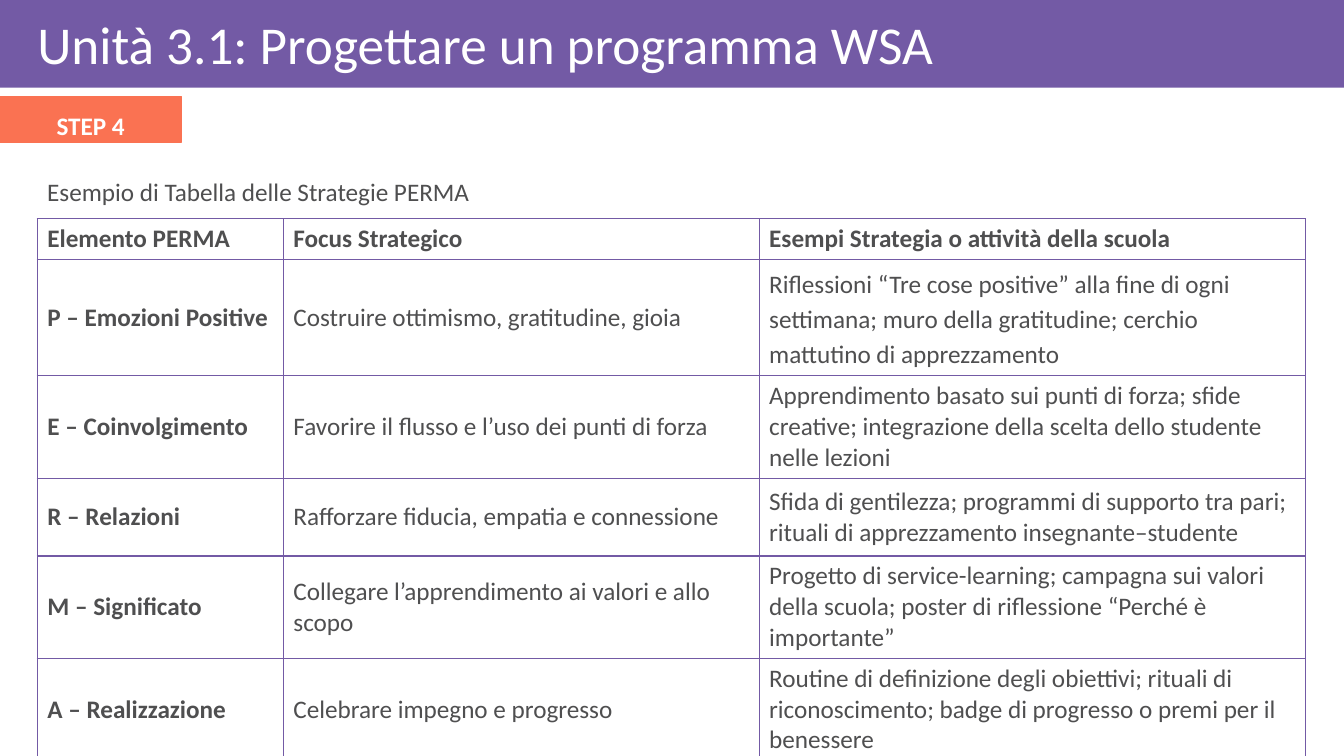
from lxml import etree
from pptx import Presentation
from pptx import util as u
from pptx.dml import color
from pptx.enum import shapes, text
from pptx.oxml import ns

COLORS = {"purple": "735AA5", "orange": "FA7252", "grey": "4F4F50", "white": "FFFFFF"}
ROWS = [
    ("Elemento PERMA", "Focus Strategico", "Esempi Strategia o attività della scuola"),
    ("P – Emozioni Positive", "Costruire ottimismo, gratitudine, gioia",
     "Riflessioni “Tre cose positive” alla fine di ogni settimana; muro della gratitudine; "
     "cerchio mattutino di apprezzamento"),
    ("E – Coinvolgimento", "Favorire il flusso e l’uso dei punti di forza",
     "Apprendimento basato sui punti di forza; sfide creative; integrazione della scelta "
     "dello studente nelle lezioni"),
    ("R – Relazioni", "Rafforzare fiducia, empatia e connessione",
     "Sfida di gentilezza; programmi di supporto tra pari; rituali di apprezzamento "
     "insegnante–studente"),
    ("M – Significato", "Collegare l’apprendimento ai valori e allo scopo",
     "Progetto di service-learning; campagna sui valori della scuola; poster di riflessione "
     "“Perché è importante”"),
    ("A – Realizzazione", "Celebrare impegno e progresso",
     "Routine di definizione degli obiettivi; rituali di riconoscimento; badge di progresso "
     "o premi per il benessere"),
]
COLUMN_WIDTHS = [6.2, 11.99, 13.77]
ROW_HEIGHTS = [0.81, 1.96, 1.96, 1.96, 1.96, 1.4]


def write(frame, words, color_name, size=18, bold=False):
    """Fill a text frame with one formatted paragraph and return the paragraph."""
    frame.text = words
    paragraph = frame.paragraphs[0]
    font = paragraph.runs[0].font
    font.name, font.size, font.bold = "Calibri", u.Pt(size), bold
    font.color.rgb = color.RGBColor.from_string(COLORS[color_name])
    return paragraph


def add_block(top, width, height, color_name):
    """Add a filled rectangle that starts at the left edge of the slide."""
    block = slide.shapes.add_shape(
        shapes.MSO_SHAPE.RECTANGLE, 0, u.Cm(top), u.Cm(width), u.Cm(height))
    block.shadow.inherit = False
    block.fill.solid()
    block.fill.fore_color.rgb = color.RGBColor.from_string(COLORS[color_name])
    block.line.color.rgb = color.RGBColor.from_string(COLORS[color_name])
    block.line.width = u.Pt(0.75)
    return block


presentation = Presentation()
presentation.slide_width, presentation.slide_height = u.Cm(33.87), u.Cm(19.05)
slide = presentation.slides.add_slide(presentation.slide_layouts[5])

# Title on its band
band = add_block(0, 33.87, 2.21, "purple")
band.line.fill.background()
slide.shapes._spTree.insert(2, band._element)

title = slide.shapes.title
title.left, title.top, title.width, title.height = u.Cm(0.69), u.Cm(0.2), u.Cm(33.17), u.Cm(1.98)
frame = title.text_frame
frame.auto_size = text.MSO_AUTO_SIZE.NONE
frame.vertical_anchor = text.MSO_ANCHOR.MIDDLE
frame.margin_left = u.Cm(0.25)
frame.margin_right = frame.margin_top = frame.margin_bottom = u.Cm(0.15)
paragraph = write(frame, "Unità 3.1: Progettare un programma WSA", "white", 38)
paragraph.alignment = text.PP_ALIGN.LEFT
paragraph.line_spacing = 0.9

# Strategy table
table = slide.shapes.add_table(
    len(ROWS), len(COLUMN_WIDTHS), u.Cm(0.94), u.Cm(5.51),
    u.Cm(sum(COLUMN_WIDTHS)), u.Cm(sum(ROW_HEIGHTS))).table
table.first_row = table.horz_banding = False
for column, width in zip(table.columns, COLUMN_WIDTHS):
    column.width = u.Cm(width)
for row, height in zip(table.rows, ROW_HEIGHTS):
    row.height = u.Cm(height)

for row_index, row_words in enumerate(ROWS):
    for column_index, words in enumerate(row_words):
        cell = table.cell(row_index, column_index)
        cell.vertical_anchor = text.MSO_ANCHOR.MIDDLE
        cell.fill.background()
        paragraph = write(cell.text_frame, words, "grey",
                          bold=row_index == 0 or column_index == 0)
        if (row_index, column_index) == (1, 2):
            paragraph.line_spacing = 1.15
            paragraph.space_before = paragraph.space_after = u.Pt(12)
        properties = cell._tc.get_or_add_tcPr()
        for position, side in enumerate(("lnL", "lnR", "lnT", "lnB")):
            border = etree.Element(ns.qn(f"a:{side}"), w=str(u.Pt(1)))
            fill = etree.SubElement(border, ns.qn("a:solidFill"))
            etree.SubElement(fill, ns.qn("a:srgbClr"), val=COLORS["purple"])
            properties.insert(position, border)

# Step tag
add_block(2.44, 4.57, 1.14, "orange")
label = slide.shapes.add_textbox(u.Cm(1.32), u.Cm(2.92), u.Cm(1.93), u.Cm(0.53))
frame = label.text_frame
frame.word_wrap = False
frame.margin_left = frame.margin_right = frame.margin_top = frame.margin_bottom = 0
paragraph = write(frame, "STEP 4", "white", bold=True)
paragraph.alignment = text.PP_ALIGN.CENTER
paragraph.line_spacing = 0.8

# Table caption
caption = slide.shapes.add_textbox(u.Cm(0.94), u.Cm(4.32), u.Cm(16.94), u.Cm(1.02))
caption.text_frame.word_wrap = True
write(caption.text_frame, "Esempio di Tabella delle Strategie PERMA", "grey")

presentation.save("out.pptx")
